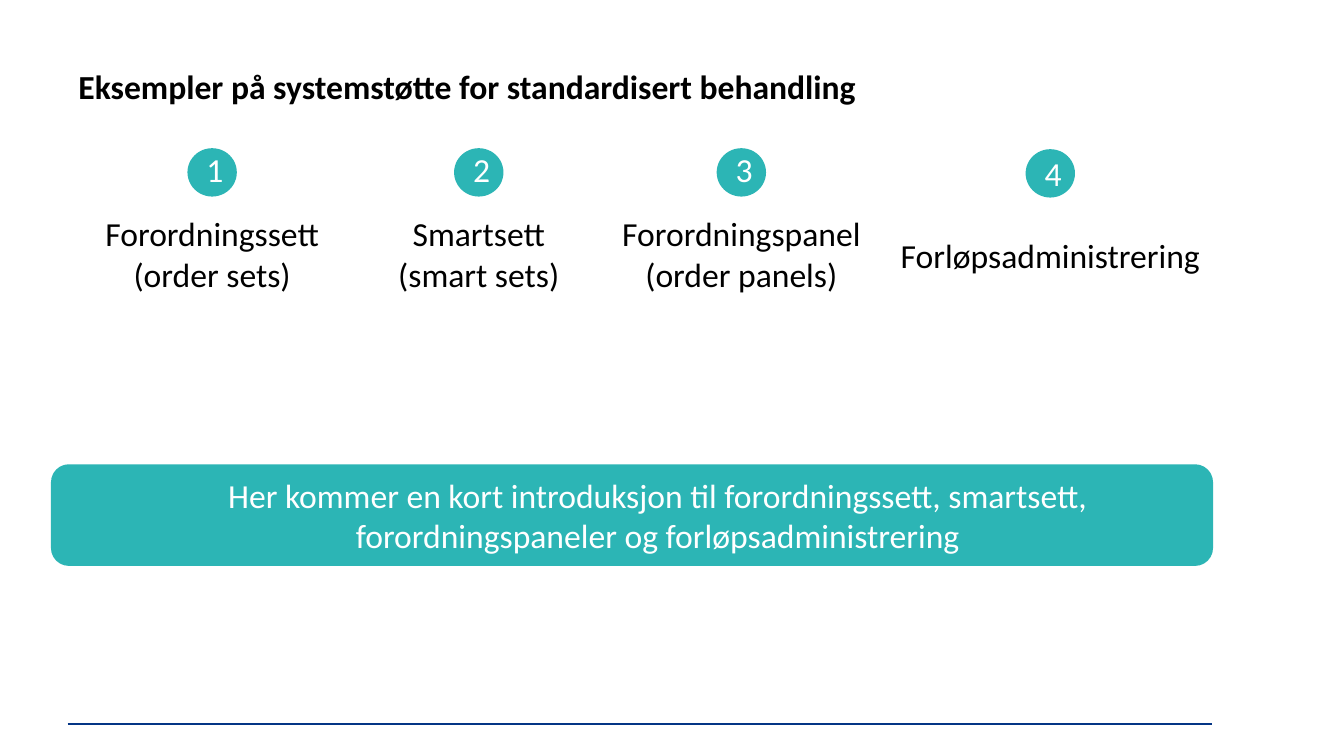
import pptx
import pptx.dml.color
import pptx.enum.shapes
import pptx.enum.text
import pptx.util
from lxml import etree

SHAPE = pptx.enum.shapes.MSO_SHAPE
ALIGN = pptx.enum.text.PP_ALIGN
TEAL, NAVY, BLACK, WHITE = "2CB5B5", "043585", "000000", "FFFFFF"

# Grid of 40 columns by 30 rows
WIDTH, HEIGHT = pptx.util.Inches(13.33), pptx.util.Inches(7.5)
COLUMN, ROW = WIDTH / 40, HEIGHT / 30


def color(code):
    return pptx.dml.color.RGBColor.from_string(code)


def cells(left, top, width, height):
    return int(left * COLUMN), int(top * ROW), int(width * COLUMN), int(height * ROW)


def add_text(shapes, text, box, ink=BLACK, bold=False, align=ALIGN.CENTER, wrap=True):
    frame = shapes.add_textbox(*cells(*box)).text_frame
    frame.word_wrap = wrap
    para = frame.paragraphs[0]
    para.alignment = align
    span = para.add_run()
    span.text = text
    span.font.name = "Calibri"
    span.font.size = pptx.util.Pt(24)
    span.font.bold = bold
    span.font.color.rgb = color(ink)


def add_filled(shapes, kind, box, outline=None):
    shape = shapes.add_shape(kind, *cells(*box))
    shape.shadow.inherit = False
    shape.fill.solid()
    shape.fill.fore_color.rgb = color(TEAL)
    if outline:
        shape.line.color.rgb = color(TEAL)
        shape.line.width = pptx.util.Pt(outline)
    else:
        shape.line.fill.background()


def add_example(page, number, label, box, digit_drop, label_drop):
    left, top, width, height = box
    middle = left + width / 2
    circle_width, digit_width = 1.47, 0.93
    shapes = page.shapes.add_group_shape().shapes
    add_filled(shapes, SHAPE.OVAL,
               (middle - circle_width / 2, top + 0.16, circle_width, 1.92))
    add_text(shapes, str(number),
             (middle - digit_width / 2, top + digit_drop, digit_width, 2),
             ink=WHITE, wrap=False)
    add_text(shapes, label, (left, top + label_drop, width, height - label_drop))


def add_examples(page, left, top):
    gap = 0.27
    # Label, width, height, shift down, digit offset, label offset
    examples = [
        ("Forordningssett (order sets)", 8.49, 6.18, 0, 0, 2.54),
        ("Smartsett (smart sets)", 6.84, 6.18, 0, 0, 2.54),
        ("Forordningspanel (order panels)", 8.25, 6.18, 0, 0, 2.54),
        ("Forløpsadministrering", 9.6, 5.36, 0.04, 0.12, 3.36),
    ]
    for number, (label, width, height, shift, digit_drop, label_drop) in enumerate(examples, 1):
        add_example(page, number, label, (left, top + shift, width, height),
                    digit_drop, label_drop)
        left += width + gap


def add_banner(page, box):
    left, top, width, height = box
    add_filled(page.shapes, SHAPE.ROUNDED_RECTANGLE, box, outline=2)
    add_text(page.shapes,
             "Her kommer en kort introduksjon til forordningssett, smartsett, "
             "forordningspaneler og forløpsadministrering",
             (left + 3.78, top + 0.16, width - 6.03, height - 0.28), ink=WHITE)


def add_footer_line(page, left, right, top):
    start_x, y, end_x, _ = cells(left, top, right, 0)
    line = page.shapes.add_connector(
        pptx.enum.shapes.MSO_CONNECTOR.STRAIGHT, start_x, y, end_x, y)
    line.line.color.rgb = color(NAVY)
    line.line.width = pptx.util.Pt(1.25)
    etree.SubElement(line.element.spPr, pptx.oxml.ns.qn("a:effectLst"))


def main():
    deck = pptx.Presentation()
    deck.slide_width, deck.slide_height = WIDTH, HEIGHT
    page = deck.slides.add_slide(deck.slide_layouts[6])
    add_footer_line(page, 2.01, 36.06, 28.72)
    add_text(page.shapes, "Eksempler på systemstøtte for standardisert behandling",
             (2.04, 2.4, 33.54, 2), bold=True, align=ALIGN.LEFT)
    add_examples(page, 2.07, 5.72)
    add_banner(page, (1.56, 18.48, 34.5, 3.92))
    deck.save("out.pptx")


if __name__ == "__main__":
    main()
